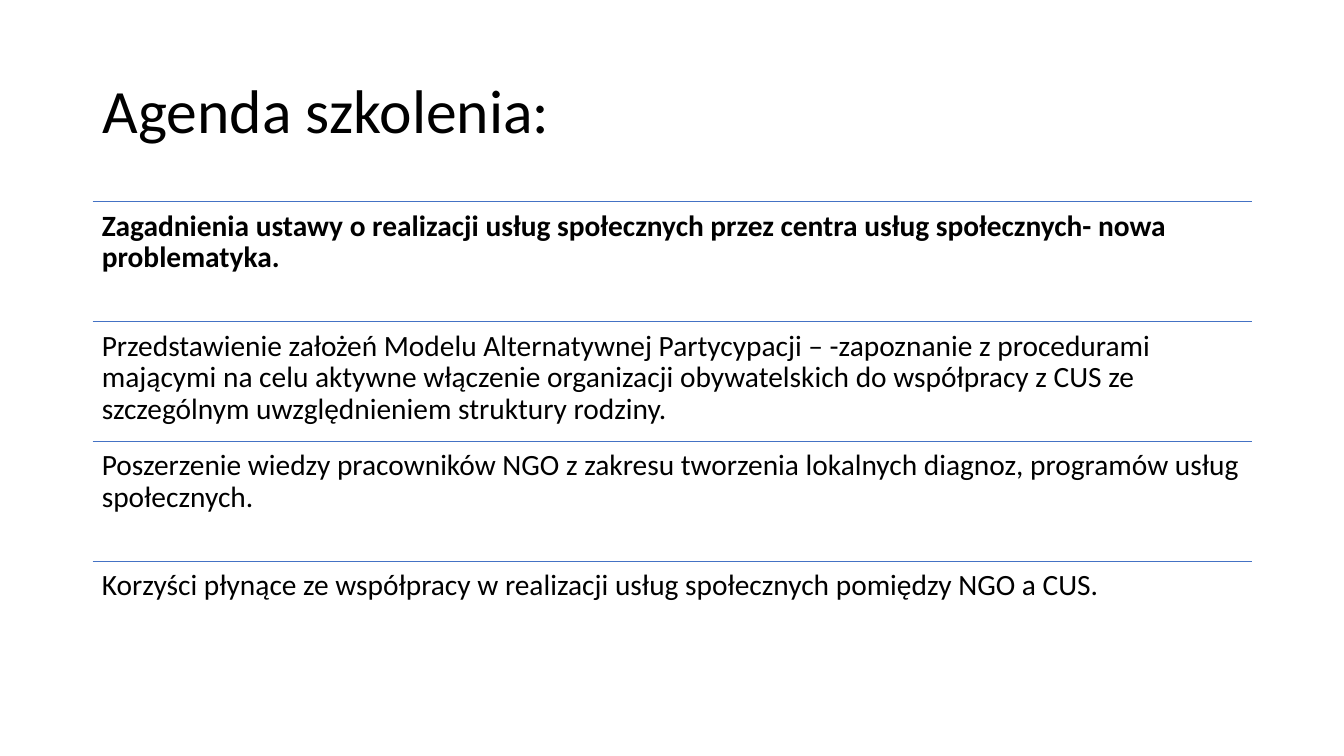
import pptx
import pptx.dml.color
import pptx.enum.shapes
import pptx.enum.text
import pptx.oxml.ns
import pptx.util
from lxml import etree

BLACK = pptx.dml.color.RGBColor(0x00, 0x00, 0x00)
BLUE = pptx.dml.color.RGBColor(0x44, 0x72, 0xC4)
TOPICS = [
    "Zagadnienia ustawy o realizacji usług społecznych przez centra usług "
    "społecznych- nowa problematyka.",
    "Przedstawienie założeń Modelu Alternatywnej Partycypacji – -zapoznanie z "
    "procedurami mającymi na celu aktywne włączenie organizacji obywatelskich do "
    "współpracy z CUS ze szczególnym uwzględnieniem struktury rodziny.",
    "Poszerzenie wiedzy pracowników NGO z zakresu tworzenia lokalnych diagnoz, "
    "programów usług społecznych.",
    "Korzyści płynące ze współpracy w realizacji usług społecznych pomiędzy NGO a CUS.",
]


class AgendaSlide:
    """Holds the agenda's style and slide, and places its parts on a grid of rows."""

    font = "Calibri"
    left = pptx.util.Inches(0.92)
    width = pptx.util.Inches(11.5)
    first_row = pptx.util.Inches(2)
    row_height = pptx.util.Inches(1.19)
    inset = pptx.util.Inches(0.09)

    def __init__(self, deck):
        self.slide = deck.slides.add_slide(deck.slide_layouts[5])

    def row_top(self, row):
        return self.first_row + row * self.row_height

    def set_text(self, frame, text, size, bold=False):
        frame.text = text
        frame.word_wrap = True
        frame.auto_size = pptx.enum.text.MSO_AUTO_SIZE.NONE
        paragraph = frame.paragraphs[0]
        paragraph.alignment = pptx.enum.text.PP_ALIGN.LEFT
        paragraph.line_spacing = 0.9
        font = paragraph.runs[0].font
        font.name = self.font
        font.size = pptx.util.Pt(size)
        font.bold = bold
        font.color.rgb = BLACK

    def title(self, text):
        heading = self.slide.shapes.title
        heading.left, heading.top = self.left, pptx.util.Inches(0.4)
        heading.width, heading.height = self.width, pptx.util.Inches(1.45)
        heading.text_frame.vertical_anchor = pptx.enum.text.MSO_ANCHOR.MIDDLE
        self.set_text(heading.text_frame, text, 44)

    def rule(self, row):
        top = self.row_top(row)
        divider = self.slide.shapes.add_connector(
            pptx.enum.shapes.MSO_CONNECTOR.STRAIGHT,
            self.left, top, self.left + self.width, top)
        divider.line.color.rgb = BLUE
        divider.line.width = pptx.util.Pt(1)
        properties = divider.element.spPr
        etree.SubElement(properties, pptx.oxml.ns.qn("a:effectLst"))

    def topic(self, row, text, bold):
        entry = self.slide.shapes.add_textbox(
            self.left, self.row_top(row), self.width, self.row_height)
        frame = entry.text_frame
        frame.margin_left = frame.margin_right = self.inset
        frame.margin_top = frame.margin_bottom = self.inset
        frame.vertical_anchor = pptx.enum.text.MSO_ANCHOR.TOP
        self.set_text(frame, text, 21, bold)


def main():
    deck = pptx.Presentation()
    deck.slide_width = pptx.util.Inches(13.33)
    deck.slide_height = pptx.util.Inches(7.5)
    agenda = AgendaSlide(deck)
    agenda.title("Agenda szkolenia:")
    for row, text in enumerate(TOPICS):
        agenda.rule(row)
        agenda.topic(row, text, bold=row == 0)
    deck.save("out.pptx")


if __name__ == "__main__":
    main()
